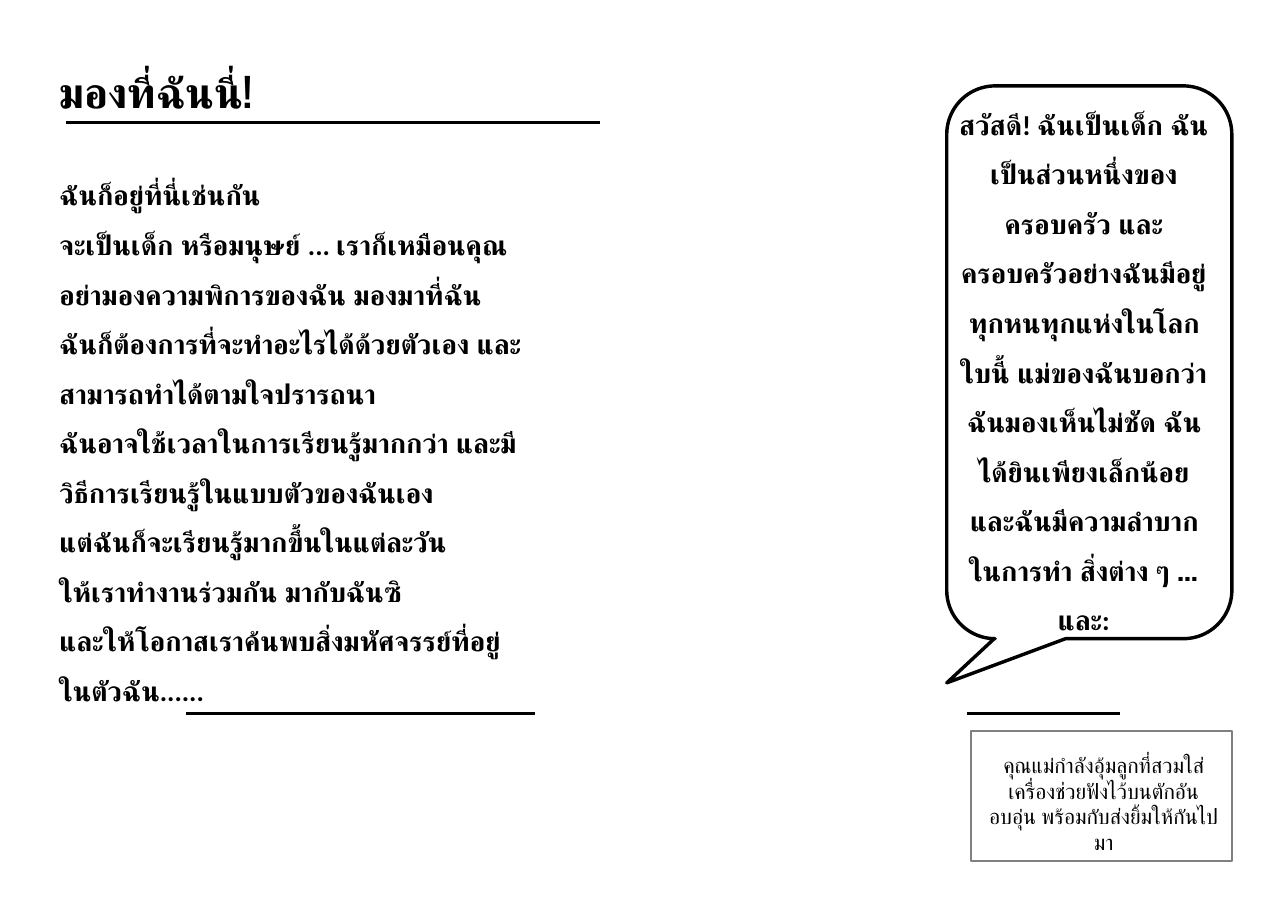
"""Build the Thai slide about looking at the child, with a speech bubble and a caption."""
from dataclasses import dataclass

from lxml import etree
from pptx import Presentation
from pptx import util as u
from pptx.dml.color import RGBColor
from pptx.enum import lang, shapes, text
from pptx.oxml import ns

BLACK = RGBColor(0x00, 0x00, 0x00)
GRAY = RGBColor(0x80, 0x80, 0x80)
INSETS = (0.1, 0.05, 0.1, 0.05)

TITLE = "มองที่ฉันนี่!"
VERSES = (
    "ฉันก็อยู่ที่นี่เช่นกัน",
    "จะเป็นเด็ก หรือมนุษย์ ... เราก็เหมือนคุณ",
    "อย่ามองความพิการของฉัน มองมาที่ฉัน",
    "ฉันก็ต้องการที่จะทำอะไรได้ด้วยตัวเอง และสามารถทำได้ตามใจปรารถนา",
    "ฉันอาจใช้เวลาในการเรียนรู้มากกว่า และมีวิธีการเรียนรู้ในแบบตัวของฉันเอง",
    "แต่ฉันก็จะเรียนรู้มากขึ้นในแต่ละวัน",
    "ให้เราทำงานร่วมกัน มากับฉันซิ",
    "และให้โอกาสเราค้นพบสิ่งมหัศจรรย์ที่อยู่ในตัวฉัน......",
)
SPEECH = (
    "สวัสดี! ฉันเป็นเด็ก ฉันเป็นส่วนหนึ่งของครอบครัว และครอบครัวอย่างฉันมีอยู่"
    "ทุกหนทุกแห่งในโลกใบนี้ แม่ของฉันบอกว่า ฉันมองเห็นไม่ชัด "
    "ฉันได้ยินเพียงเล็กน้อย และฉันมีความลำบากในการทำ สิ่งต่าง ๆ …และ:"
)
CAPTION = (
    "คุณแม่กำลังอุ้มลูกที่สวมใส่เครื่องช่วยฟังไว้บนตักอันอบอุ่น "
    "พร้อมกับส่งยิ้มให้กันไปมา"
)


@dataclass(frozen=True)
class Style:
    font: str
    size: float
    bold: bool
    align: text.PP_ALIGN
    spacing: float


@dataclass(frozen=True)
class Rule:
    left: float
    right: float
    top: float


HEADING = Style("Cabin", 28, True, text.PP_ALIGN.LEFT, 1.0)
VERSE = Style("Calibri", 18, True, text.PP_ALIGN.LEFT, 1.5)
SPOKEN = Style("Calibri", 18, True, text.PP_ALIGN.CENTER, 1.5)
NOTE = Style("Calibri", 14, False, text.PP_ALIGN.CENTER, 1.0)
RULES = (Rule(0.6, 5.45, 1.11), Rule(1.69, 4.86, 6.48), Rule(8.78, 10.17, 6.48))


def place(box, left: float, top: float, width: float, height: float) -> None:
    box.left, box.top = u.Inches(left), u.Inches(top)
    box.width, box.height = u.Inches(width), u.Inches(height)


def write(box, words: str, style: Style, insets: tuple = INSETS) -> None:
    frame = box.text_frame
    frame.text = words
    frame.word_wrap = True
    frame.auto_size = text.MSO_AUTO_SIZE.NONE
    frame.vertical_anchor = text.MSO_ANCHOR.TOP
    (frame.margin_left, frame.margin_top,
     frame.margin_right, frame.margin_bottom) = map(u.Inches, insets)
    for para in frame.paragraphs:
        para.alignment = style.align
        para.line_spacing = style.spacing
        para.space_before = para.space_after = u.Pt(0)
        for span in para.runs:
            span.font.name = style.font
            span.font.size = u.Pt(style.size)
            span.font.bold = style.bold
            span.font.color.rgb = BLACK
            span.font.language_id = lang.MSO_LANGUAGE_ID.THAI


def remove_bullets(box) -> None:
    for para in box.text_frame.paragraphs:
        props = para._p.get_or_add_pPr()
        props.set("marL", "0")
        props.set("indent", "0")
        etree.SubElement(props, ns.qn("a:buNone"))


def add_outline(page, kind: shapes.MSO_SHAPE, bounds: tuple, color: RGBColor, weight: float):
    box = page.shapes.add_shape(kind, *map(u.Inches, bounds))
    box.shadow.inherit = False
    box.fill.background()
    box.line.color.rgb = color
    box.line.width = u.Pt(weight)
    return box


def add_rule(page, rule: Rule) -> None:
    line = page.shapes.add_connector(
        shapes.MSO_CONNECTOR.STRAIGHT,
        u.Inches(rule.left), u.Inches(rule.top), u.Inches(rule.right), u.Inches(rule.top))
    line.line.color.rgb = BLACK
    line.line.width = u.Pt(2.25)
    etree.SubElement(line._element.spPr, ns.qn("a:effectLst"))


def main() -> None:
    deck = Presentation()
    deck.slide_width, deck.slide_height = u.Inches(11.7), u.Inches(8.3)
    page = deck.slides.add_slide(deck.slide_layouts[1])

    title, body = page.placeholders
    place(title, 0.44, 0.55, 4.43, 0.6)
    write(title, TITLE, HEADING)
    place(body, 0.44, 1.42, 4.43, 5.1)
    write(body, "\n".join(VERSES), VERSE)
    remove_bullets(body)

    bubble = add_outline(
        page, shapes.MSO_SHAPE.ROUNDED_RECTANGULAR_CALLOUT, (8.6, 0.78, 2.59, 5.02), BLACK, 2.25)
    for index, value in enumerate((-0.5, 0.58, 0.17)):
        bubble.adjustments[index] = value
    speech = page.shapes.add_textbox(*map(u.Inches, (8.6, 0.78, 2.49, 5.57)))
    write(speech, SPEECH, SPOKEN)

    caption = add_outline(page, shapes.MSO_SHAPE.RECTANGLE, (8.82, 6.64, 2.37, 1.18), GRAY, 1)
    write(caption, CAPTION, NOTE, (0.14, 0.19, 0.1, 0.05))

    for rule in RULES:
        add_rule(page, rule)
    deck.save("out.pptx")


if __name__ == "__main__":
    main()
